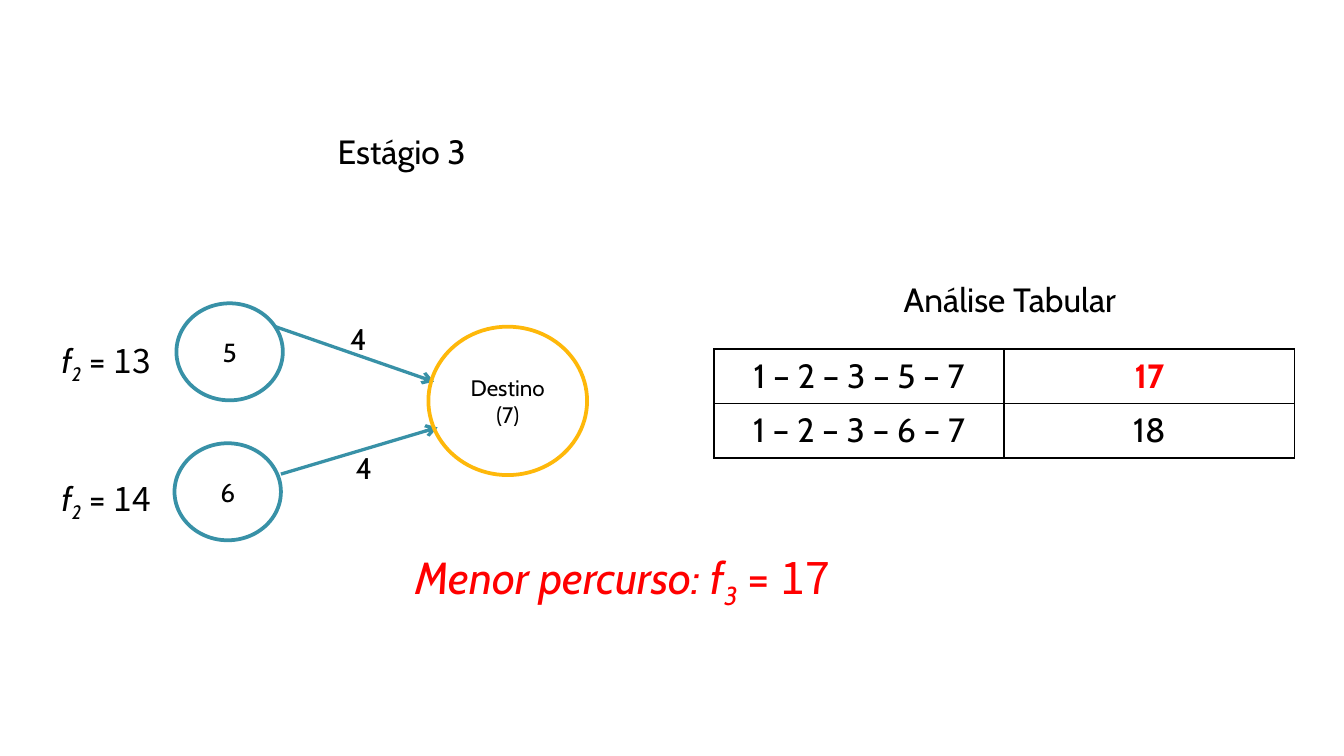
from lxml.etree import SubElement
from pptx import Presentation
from pptx.dml.color import RGBColor as Color
from pptx.enum.shapes import MSO_CONNECTOR as Connector, MSO_SHAPE as Shape
from pptx.enum.text import MSO_ANCHOR as Anchor, PP_ALIGN as Align
from pptx.oxml.ns import qn
from pptx.util import Pt

COLORS = {"black": "000000", "red": "FF0000", "teal": "3891A7", "gold": "FEB80A", "white": "FFFFFF"}
MAIN, DIGITS = "Cabin", "Noto Sans CJK SC"


def add_span(para, text, size, color="black", baseline=0, **formats):
    span = para.add_run()
    span.text = text
    values = {"name": MAIN, "size": Pt(size), "bold": False, "italic": False} | formats
    for name, value in values.items():
        setattr(span.font, name, value)
    span.font.color.rgb = Color.from_string(COLORS[color])
    if baseline:
        span._r.get_or_add_rPr().set("baseline", str(baseline))


def add_box(left, top, width, height):
    box = page.shapes.add_textbox(Pt(left), Pt(top), Pt(width), Pt(height))
    box.text_frame.word_wrap = True
    return box.text_frame.paragraphs[0]


deck = Presentation()
deck.slide_width, deck.slide_height = Pt(720), Pt(405)
page = deck.slides.add_slide(deck.slide_layouts[5])

title = page.shapes.title
title.left, title.top, title.width, title.height = Pt(127.5), Pt(66.5), Pt(175.5), Pt(29)
title.text_frame.vertical_anchor = Anchor.TOP
para = title.text_frame.paragraphs[0]
para.alignment = Align.CENTER
add_span(para, "Estágio 3", 18)

formulas = [
    (26, 178.5, 91, 29, "", "2", "13", 18, "black"),
    (26, 252.5, 91, 29, "", "2", "14", 18, "black"),
    (215.5, 291, 281, 36, "Menor percurso: ", "3", "17", 24, "red"),
]
for left, top, width, height, lead, index, value, size, color in formulas:
    para = add_box(left, top, width, height)
    add_span(para, lead + "f", size, color, italic=True)
    add_span(para, index, size, color, baseline=-25000, italic=True)
    add_span(para, " = ", size, color)
    add_span(para, value, size, color, name=DIGITS)

arrows = [
    (150.5, 254, 234.5, 229),
    (147.5, 175, 232.5, 204.5),
]
for ends in arrows:
    arrow = page.shapes.add_connector(Connector.STRAIGHT, *map(Pt, ends))
    arrow.line.color.rgb = Color.from_string(COLORS["teal"])
    arrow.line.width = Pt(1.75)
    SubElement(arrow.line._get_or_add_ln(), qn("a:tailEnd"), type="arrow")
    SubElement(arrow._element.spPr, qn("a:effectLst"))

for left, top in [(180.5, 168.5), (183.5, 237.5)]:
    add_span(add_box(left, top, 19.5, 26.5), "4", 16)

nodes = [
    (229.5, 175, 85, 79.5, "gold", 12, ["Destino", "(7)"]),
    (94.5, 162.5, 57, 52, "teal", 14, ["5"]),
    (93.5, 237.5, 57, 52, "teal", 14, ["6"]),
]
for left, top, width, height, color, size, lines in nodes:
    node = page.shapes.add_shape(Shape.OVAL, Pt(left), Pt(top), Pt(width), Pt(height))
    node.shadow.inherit = False
    node.fill.background()
    node.line.color.rgb = Color.from_string(COLORS[color])
    node.line.width = Pt(2)
    frame = node.text_frame
    frame.vertical_anchor = Anchor.MIDDLE
    for number, line in enumerate(lines):
        para = frame.add_paragraph() if number else frame.paragraphs[0]
        para.alignment = Align.CENTER
        add_span(para, line, size)

para = add_box(439, 146, 204, 29)
para.alignment = Align.CENTER
add_span(para, "Análise Tabular", 18)

routes = [
    [("1 – 2 – 3 – 5 – 7", "black", False), ("17", "red", True)],
    [("1 – 2 – 3 – 6 – 7", "black", False), ("18", "black", False)],
]
table = page.shapes.add_table(2, 2, Pt(382.5), Pt(187), Pt(311), Pt(58.4)).table
for row, route in enumerate(routes):
    for column, (text, color, bold) in enumerate(route):
        cell = table.cell(row, column)
        properties = cell._tc.get_or_add_tcPr()
        for side in ("lnL", "lnR", "lnT", "lnB"):
            border = SubElement(properties, qn("a:" + side), w=str(Pt(1)))
            fill = SubElement(border, qn("a:solidFill"))
            SubElement(fill, qn("a:srgbClr"), val=COLORS["black"])
        cell.fill.solid()
        cell.fill.fore_color.rgb = Color.from_string(COLORS["white"])
        para = cell.text_frame.paragraphs[0]
        para.alignment = Align.CENTER
        add_span(para, text, 18, color, bold=bold)

deck.save("out.pptx")
